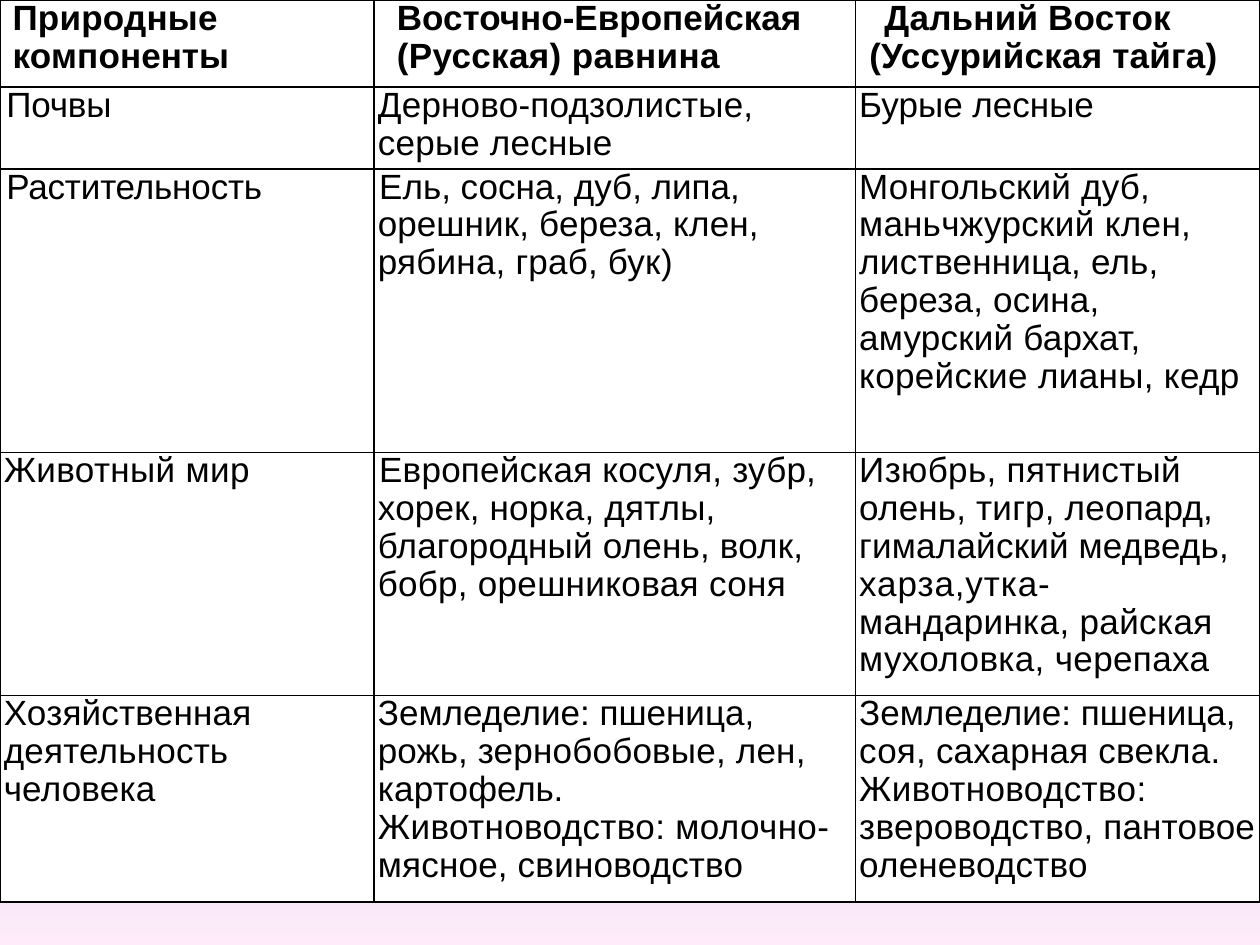
from lxml.etree import SubElement
from pptx import Presentation
from pptx.dml.color import RGBColor
from pptx.oxml.ns import qn
from pptx.util import Inches, Pt

COLUMN_WIDTHS = [2.97, 3.82, 3.21]
ROW_HEIGHTS = [0.69, 0.65, 2.25, 1.93, 1.64, 0.33]
BACKGROUND_STOPS = [(0, "5E9EFF"), (40, "85C2FF"), (70, "C4D6EB"), (100, "FFEBFA")]

# fmt: off
ROWS = [
    [
        ((0.07, 0), [("Природные компо", 0.1), ("ненты", 0)]),
        ((0.15, 0), [("Восточно-Европейская ", 0), ("(Русская) равнина", 0.2)]),
        ((0.08, 0.12), [("Дальний Восток (Уссурийская тайга)", 0.1)]),
    ],
    [
        ((0.02, 0), [("Почвы", -0.1)]),
        ((0, 0), [("Дерново-подзолистые, серые лесные", 0.1)]),
        ((0, 0), [("Бурые лесные", 0)]),
    ],
    [
        ((0.02, 0), [("Растительность", -0.1)]),
        ((0, 0.01), [("Ель, сосна, дуб, липа, ореш", 0),
                     ("ник, береза, клен, рябина, граб, бук", 0.1), (")", 0.2)]),
        ((0, 0), [("Монгольский дуб, мань", 0.1), ("чжурский клен, лист", 0.2),
                  ("венница, ель, береза, осина, амурский бархат, ", 0.1),
                  ("корейские лианы, кедр", 0.2)]),
    ],
    [
        ((0, 0), [("Животный мир", 0.2)]),
        ((0, 0.01), [("Европейская косуля, зубр, хорек, норка, дятлы, "
                      "благородный олень, волк, бобр, ", 0.1),
                     ("орешниковая соня", 0.2)]),
        ((0, 0), [("Изюбрь, пятнистый ", 0.2),
                  ("олень, тигр, леопард, гималайский медведь, ", 0.1),
                  ("харза,утка-", 0.5),
                  ("мандаринка, райская мухоловка, черепаха", 0.2)]),
    ],
    [
        ((0, -0.01), [("Хозяйственная деятельность человека", 0.1)]),
        ((0, 0), [("Земледелие: пшеница, рожь, ", 0),
                  ("зернобобовые, лен, карто", 0.1), ("фель. ", -0.1),
                  ("Животноводство: молочно-", 0.2), ("мясное, свиноводство", 0.1)]),
        ((0, 0), [("Земледелие: пшеница, ", 0), ("соя, сахарная свекла. ", 0.1),
                  ("Животноводство: зве", 0.2),
                  ("роводство, пантовое оленеводство", 0.1)]),
    ],
]
# fmt: on


def color(hex_value):
    return RGBColor.from_string(hex_value)


def paint_background(slide):
    fill = slide.background.fill
    fill.gradient()
    gradient = slide.background._cSld.find(".//" + qn("a:gradFill"))
    for child in list(gradient):
        gradient.remove(child)
    stops = SubElement(gradient, qn("a:gsLst"))
    for position, hex_value in BACKGROUND_STOPS:
        stop = SubElement(stops, qn("a:gs"), pos=str(position * 1000))
        SubElement(stop, qn("a:srgbClr"), val=hex_value)
    SubElement(gradient, qn("a:lin"), ang="5400000", scaled="0")


def set_borders(cell, visible_sides):
    properties = cell._tc.get_or_add_tcPr()
    for side in "LRTB":
        line = SubElement(properties, qn(f"a:ln{side}"), w=str(Pt(1)))
        if side in visible_sides:
            solid = SubElement(line, qn("a:solidFill"))
            SubElement(solid, qn("a:srgbClr"), val="000000")
        else:
            SubElement(line, qn("a:noFill"))


def fill_cell(cell, indents, runs, bold):
    cell.margin_left = cell.margin_right = Inches(0.03)
    cell.margin_top = cell.margin_bottom = 0
    set_borders(cell, "LRTB")
    cell.fill.solid()
    cell.fill.fore_color.rgb = color("FFFFFF")
    paragraph = cell.text_frame.paragraphs[0]
    paragraph.line_spacing = 0.97
    left, first_line = indents
    properties = paragraph._p.get_or_add_pPr()
    properties.set("marL", str(Inches(left)))
    properties.set("indent", str(Inches(first_line)))
    for text, spacing in runs:
        run = paragraph.add_run()
        run.text = text
        run.font.name = "Arial"
        run.font.size = Pt(20)
        run.font.bold = bold
        run.font.color.rgb = color("000000")
        run._r.get_or_add_rPr().set("spc", str(round(spacing * 100)))


def add_comparison_table(slide, left, top, width, height):
    table = slide.shapes.add_table(
        len(ROW_HEIGHTS), len(COLUMN_WIDTHS),
        Inches(left), Inches(top), Inches(width), Inches(height),
    ).table
    table.first_row = table.horz_banding = False
    for column, column_width in zip(table.columns, COLUMN_WIDTHS):
        column.width = Inches(column_width)
    for row, row_height in zip(table.rows, ROW_HEIGHTS):
        row.height = Inches(row_height)
    for row_index, components in enumerate(ROWS):
        for column_index, (indents, runs) in enumerate(components):
            fill_cell(table.cell(row_index, column_index), indents, runs, row_index == 0)
    last_row = len(ROWS)
    for column_index in range(len(COLUMN_WIDTHS)):
        footer = table.cell(last_row, column_index)
        set_borders(footer, "T")
        footer.fill.background()
    table.cell(last_row, 0).merge(table.cell(last_row, len(COLUMN_WIDTHS) - 1))


def main():
    presentation = Presentation()
    presentation.slide_width = Inches(10)
    presentation.slide_height = Inches(7.5)
    slide = presentation.slides.add_slide(presentation.slide_layouts[6])
    paint_background(slide)
    add_comparison_table(slide, 0, 0, sum(COLUMN_WIDTHS), sum(ROW_HEIGHTS))
    presentation.save("out.pptx")


if __name__ == "__main__":
    main()
